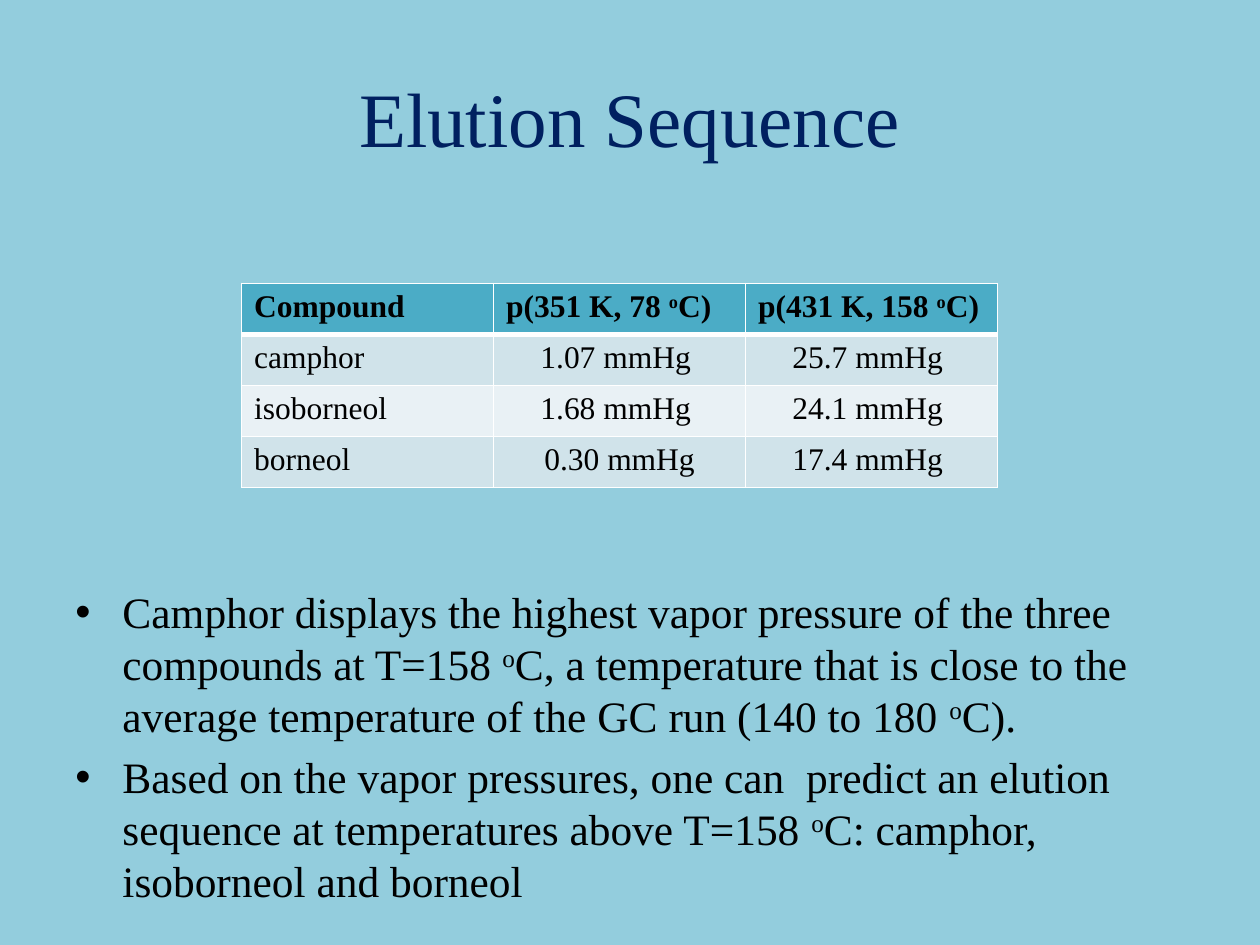
from lxml.etree import SubElement
from pptx import Presentation
from pptx.dml.color import RGBColor
from pptx.enum.text import MSO_ANCHOR, PP_ALIGN
from pptx.oxml.ns import qn
from pptx.util import Cm, Pt

COLORS = {
    "background": "93CDDD",
    "title": "002060",
    "text": "000000",
    "header": "4BACC6",
    "odd": "D0E3EA",
    "even": "E9F1F5",
    "border": "FFFFFF",
}
PRESSURES = [
    ["Compound", "p(351 K, 78 ^o^C)", "p(431 K, 158 ^o^C)"],
    ["camphor", "1.07 mmHg ", "25.7 mmHg "],
    ["isoborneol", "1.68 mmHg ", "24.1 mmHg "],
    ["borneol", "0.30 mmHg", "17.4 mmHg "],
]
CONCLUSIONS = [
    "Camphor displays the highest vapor pressure of the three compounds at "
    "T=158 ^o^C, a temperature that is close to the average temperature of "
    "the GC run (140 to 180 ^o^C).",
    "Based on the vapor pressures, one can  predict an elution sequence at "
    "temperatures above T=158 ^o^C: camphor, isoborneol and borneol",
]


def rgb(name):
    return RGBColor.from_string(COLORS[name])


def write(paragraph, text, size=18, color="text", bold=False,
          align=PP_ALIGN.LEFT, font="Times New Roman"):
    paragraph.alignment = align
    for position, part in enumerate(text.split("^")):
        run = paragraph.add_run()
        run.text = part
        run.font.name = font
        run.font.size = Pt(size)
        run.font.bold = bold
        run.font.color.rgb = rgb(color)
        if position % 2:
            run.font._element.set("baseline", "30000")


class SlideBuilder:
    def __init__(self, slide):
        self.slide = slide
        slide.background.fill.solid()
        slide.background.fill.fore_color.rgb = rgb("background")

    def frame(self, left, top, width, height):
        box = self.slide.shapes.add_textbox(Cm(left), Cm(top), Cm(width), Cm(height))
        box.text_frame.word_wrap = True
        return box.text_frame

    def title(self, text, *place):
        heading = self.frame(*place)
        heading.vertical_anchor = MSO_ANCHOR.MIDDLE
        write(heading.paragraphs[0], text, size=44, color="title",
              align=PP_ALIGN.CENTER)

    def bullets(self, items, *place):
        body = self.frame(*place)
        for index, item in enumerate(items):
            point = body.add_paragraph() if index else body.paragraphs[0]
            point.line_spacing = Pt(29.7)
            point.space_after = Pt(5)
            write(point, item, size=24.8)
            properties = point._p.get_or_add_pPr()
            properties.set("marL", str(Cm(0.95)))
            properties.set("indent", str(Cm(-0.95)))
            SubElement(properties, qn("a:buFont"), typeface="Arial")
            SubElement(properties, qn("a:buChar"), char="•")

    def borders(self, cell, widths):
        properties = cell._tc.get_or_add_tcPr()
        for side, width in widths.items():
            line = SubElement(properties, qn(f"a:ln{side}"), w=str(Pt(width)))
            fill = SubElement(line, qn("a:solidFill"))
            SubElement(fill, qn("a:srgbClr"), val=COLORS["border"])

    def table(self, rows, left, top, width, height):
        grid = self.slide.shapes.add_table(
            len(rows), len(rows[0]), Cm(left), Cm(top), Cm(width), Cm(height)
        ).table
        for r, row in enumerate(rows):
            fill = "header" if r == 0 else "odd" if r % 2 else "even"
            for c, text in enumerate(row):
                cell = grid.cell(r, c)
                self.borders(cell, {"L": 1, "R": 1, "T": 3 if r == 1 else 1,
                                    "B": 3 if r == 0 else 1})
                cell.fill.solid()
                cell.fill.fore_color.rgb = rgb(fill)
                write(cell.text_frame.paragraphs[0], text, bold=r == 0,
                      align=PP_ALIGN.CENTER if r and c else PP_ALIGN.LEFT)


def main():
    presentation = Presentation()
    presentation.slide_width = Cm(25.4)
    presentation.slide_height = Cm(19.05)
    builder = SlideBuilder(presentation.slides.add_slide(presentation.slide_layouts[6]))
    builder.title("Elution Sequence", 1.27, 0.76, 22.86, 3.18)
    builder.table(PRESSURES, 4.87, 5.71, 15.24, 4.12)
    builder.bullets(CONCLUSIONS, 1.27, 11.68, 22.86, 6.7)
    presentation.save("out.pptx")


if __name__ == "__main__":
    main()
